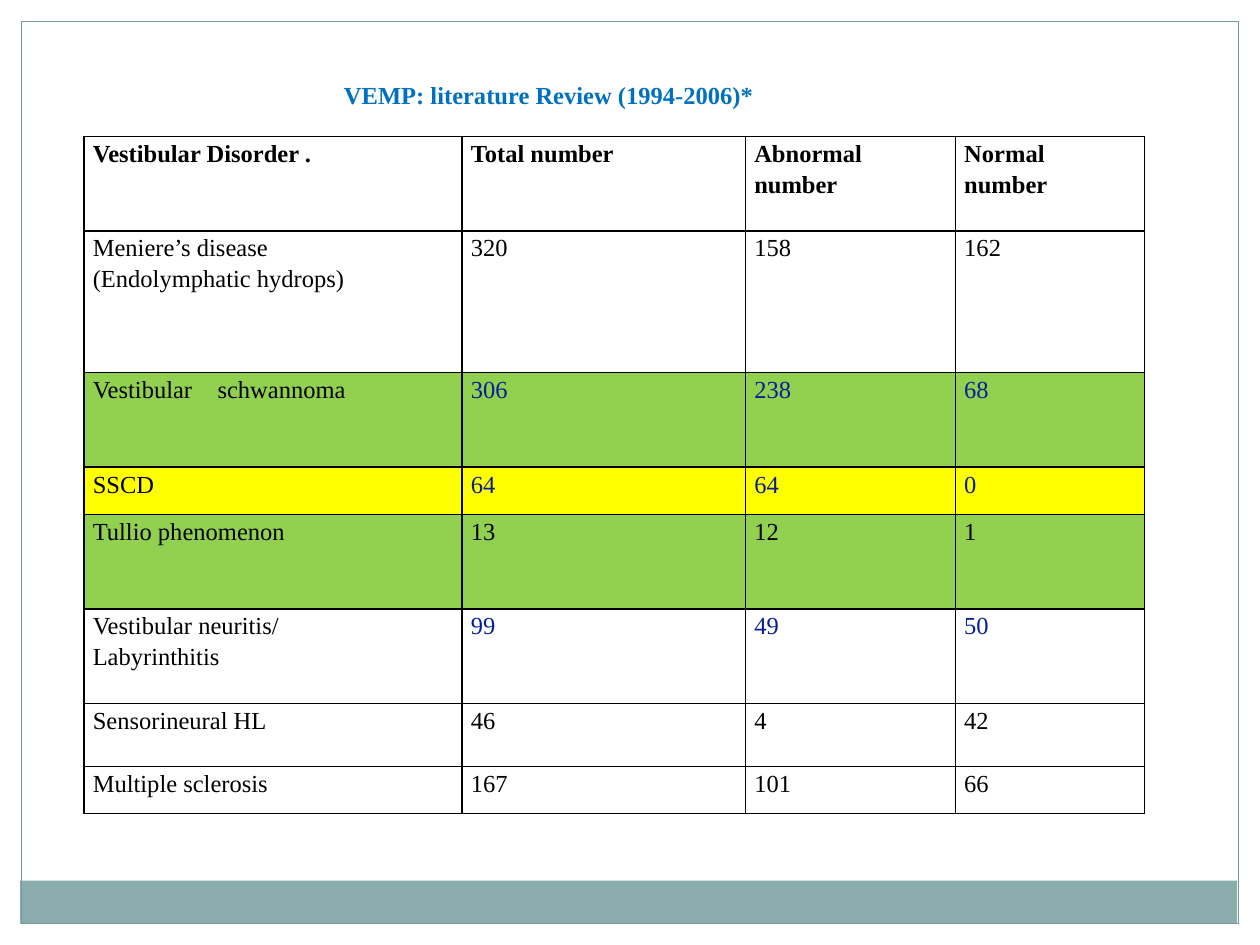
from dataclasses import dataclass

from lxml.etree import SubElement
from pptx import Presentation
from pptx.dml.color import RGBColor
from pptx.enum.shapes import MSO_SHAPE
from pptx.enum.text import MSO_ANCHOR, PP_ALIGN
from pptx.oxml.ns import qn
from pptx.util import Inches, Pt


@dataclass(frozen=True)
class Theme:
    font: str = "Times New Roman"
    size: float = 14
    line_spacing: float = 1.15
    title: str = "0070C0"
    text: str = "000000"
    accent: str = "061E98"
    green: str = "92D050"
    yellow: str = "FFFF00"
    margin: str = "FFFFFF"
    band: str = "8CADAE"
    frame: str = "7C999A"
    border: str = "000000"


THEME = Theme()
MARGIN = 0.17
COLUMN_WIDTHS = [3, 2.25, 5 / 3, 1.5]
NAME_TAB = Inches(0.99)

# Each row: height, row fill, number colour, cell texts
ROWS = [
    (3 / 4, None, THEME.text,
     ["Vestibular Disorder .", "Total number", "Abnormal\nnumber", "Normal\nnumber"]),
    (9 / 8, None, THEME.text,
     ["Meniere’s disease\n(Endolymphatic hydrops)", "320", "158", "162"]),
    (3 / 4, THEME.green, THEME.accent, ["Vestibular\tschwannoma", "306", "238", "68"]),
    (3 / 8, THEME.yellow, THEME.accent, ["SSCD", "64", "64", "0"]),
    (3 / 4, THEME.green, THEME.text, ["Tullio phenomenon", "13", "12", "1"]),
    (3 / 4, None, THEME.accent,
     ["Vestibular neuritis/\nLabyrinthitis", "99", "49", "50"]),
    (1 / 2, None, THEME.text, ["Sensorineural HL", "46", "4", "42"]),
    (3 / 8, None, THEME.text, ["Multiple sclerosis", "167", "101", "66"]),
]


def set_attributes(target, values):
    for name, value in values.items():
        setattr(target, name, value)


def add_text(paragraph, text, color, bold=False):
    run = paragraph.add_run()
    run.text = text
    set_attributes(run.font, {"name": THEME.font, "size": Pt(THEME.size), "bold": bold})
    run.font.color.rgb = RGBColor.from_string(color)


def add_rectangle(slide, box, fill=None, line=None):
    shape = slide.shapes.add_shape(MSO_SHAPE.RECTANGLE, *map(Inches, box))
    shape.shadow.inherit = False
    if fill:
        shape.fill.solid()
        shape.fill.fore_color.rgb = RGBColor.from_string(fill)
    else:
        shape.fill.background()
    if line:
        shape.line.color.rgb = RGBColor.from_string(line)
        shape.line.width = Pt(0.75)
    else:
        shape.line.fill.background()


def add_title(slide, text):
    title = slide.shapes.title
    set_attributes(title, {"left": Inches(0.83), "top": Inches(0.58),
                           "width": Inches(9.83), "height": Inches(0.34)})
    set_attributes(title.text_frame, {
        "margin_left": Inches(1.9), "margin_top": Inches(0.05),
        "margin_bottom": Inches(0.05), "vertical_anchor": MSO_ANCHOR.MIDDLE,
        "word_wrap": True})
    paragraph = title.text_frame.paragraphs[0]
    paragraph.alignment = PP_ALIGN.LEFT
    add_text(paragraph, text, THEME.title, bold=True)


def add_borders(cell):
    properties = cell._tc.get_or_add_tcPr()
    for index, side in enumerate(("lnL", "lnR", "lnT", "lnB")):
        line = properties.makeelement(qn(f"a:{side}"), {"w": str(Pt(1))})
        fill = SubElement(line, qn("a:solidFill"))
        SubElement(fill, qn("a:srgbClr"), val=THEME.border)
        properties.insert(index, line)


def add_tab_stop(paragraph, position):
    tabs = SubElement(paragraph._p.get_or_add_pPr(), qn("a:tabLst"))
    SubElement(tabs, qn("a:tab"), pos=str(position), algn="l")


def fill_cell(cell, text, fill, color, bold):
    set_attributes(cell, {"margin_left": Inches(0.07), "margin_right": Inches(0.07),
                          "margin_top": 0, "margin_bottom": 0})
    if fill:
        cell.fill.solid()
        cell.fill.fore_color.rgb = RGBColor.from_string(fill)
    else:
        cell.fill.background()
    add_borders(cell)
    frame = cell.text_frame
    for index, line in enumerate(text.split("\n")):
        paragraph = frame.add_paragraph() if index else frame.paragraphs[0]
        paragraph.line_spacing = THEME.line_spacing
        if "\t" in line:
            add_tab_stop(paragraph, NAME_TAB)
        add_text(paragraph, line, color, bold)


def add_disorder_table(slide):
    height = sum(row[0] for row in ROWS)
    table = slide.shapes.add_table(
        len(ROWS), len(COLUMN_WIDTHS), Inches(2 / 3), Inches(13 / 12),
        Inches(sum(COLUMN_WIDTHS)), Inches(height)).table
    set_attributes(table, {"first_row": False, "horz_banding": False})
    for column, width in zip(table.columns, COLUMN_WIDTHS):
        column.width = Inches(width)
    for row_index, (row_height, fill, number_color, texts) in enumerate(ROWS):
        table.rows[row_index].height = Inches(row_height)
        for column_index, text in enumerate(texts):
            color = number_color if column_index else THEME.text
            fill_cell(table.cell(row_index, column_index), text, fill, color,
                      bold=row_index == 0)


def main():
    presentation = Presentation()
    set_attributes(presentation, {"slide_width": Inches(10), "slide_height": Inches(7.5)})
    slide = presentation.slides.add_slide(presentation.slide_layouts[5])

    # White margins at the top, right and left
    for box in ((0, 0, 10, MARGIN), (10 - MARGIN, 0, MARGIN, 7.5), (0, 0, MARGIN, 7.5)):
        add_rectangle(slide, box, fill=THEME.margin)

    # Bottom band and page frame
    add_rectangle(slide, (0.16, 6.99, 9.66, 0.34), fill=THEME.band)
    add_rectangle(slide, (MARGIN, MARGIN, 9.66, 7.16), line=THEME.frame)

    # Table and title
    add_disorder_table(slide)
    add_title(slide, "VEMP: literature Review (1994-2006)*")

    presentation.save("out.pptx")


if __name__ == "__main__":
    main()
